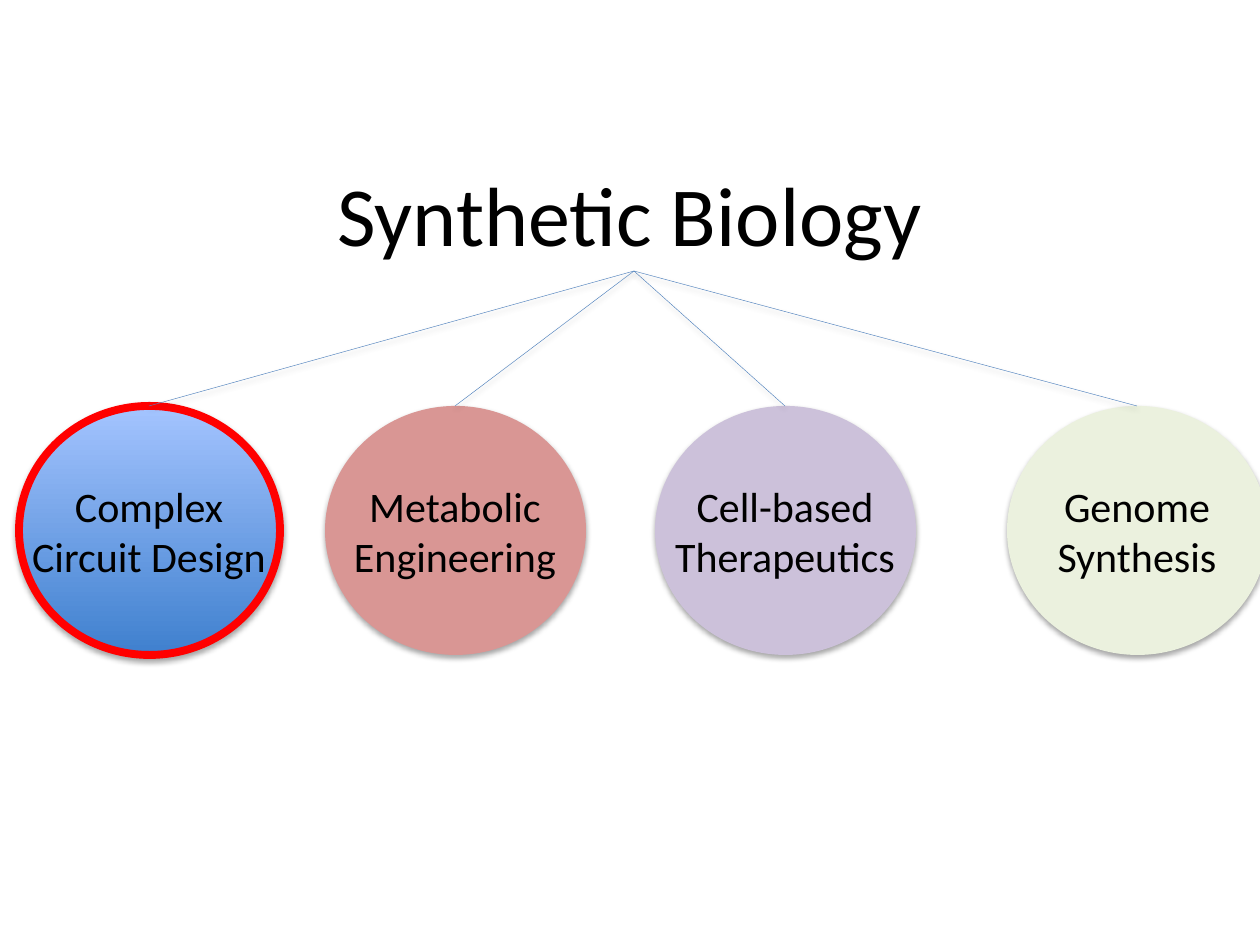
from lxml import etree
from pptx import Presentation
from pptx import util as u
from pptx.dml.color import RGBColor
from pptx.enum import shapes, text
from pptx.oxml import ns

PX = u.Inches(1) / 126
INK = {
    "text": "000000", "wire": "4F81BD", "ring": "FF0000",
    "low": "3F80CE", "high": "A4C4FF",
    "rose": "D99694", "lilac": "CCC1DA", "lime": "EBF1DE",
}


def px(*sizes):
    return [round(n * PX) for n in sizes]


def rgb(name):
    return RGBColor.from_string(INK[name])


def shade(item, dist, alpha):
    props = item._element.spPr
    effects = etree.SubElement(props, ns.qn("a:effectLst"))
    outer = etree.SubElement(effects, ns.qn("a:outerShdw"), blurRad="40000",
                             dist=str(dist), dir="5400000", rotWithShape="0")
    ink = etree.SubElement(outer, ns.qn("a:srgbClr"), val=INK["text"])
    etree.SubElement(ink, ns.qn("a:alpha"), val=str(alpha * 1000))


def write(slide, words, box, size=24, wrap=True, align=text.PP_ALIGN.CENTER):
    frame = slide.shapes.add_textbox(*px(*box)).text_frame
    frame.word_wrap = wrap
    frame.auto_size = text.MSO_AUTO_SIZE.SHAPE_TO_FIT_TEXT
    para = frame.paragraphs[0]
    para.alignment = align
    run = para.add_run()
    run.text = words
    run.font.name = "Calibri"
    run.font.size = u.Pt(size)
    run.font.color.rgb = rgb("text")


def topic(slide, box, words, fill, span):
    left, top, wide, high = box
    disc = slide.shapes.add_shape(shapes.MSO_SHAPE.OVAL, *px(*box))
    if fill:
        disc.fill.solid()
        disc.fill.fore_color.rgb = rgb(fill)
        disc.line.fill.background()
    else:
        disc.fill.gradient()
        disc.fill.gradient_angle = 90
        for stop, name, place in zip(disc.fill.gradient_stops, ("low", "high"), (0, 1)):
            stop.color.rgb = rgb(name)
            stop.position = place
        disc.line.color.rgb = rgb("ring")
        disc.line.width = u.Pt(4.5)
    shade(disc, 23000, 35)
    write(slide, words, (left + (wide - span) // 2, top + 68, span, 115))


def branch(slide, start, end):
    wire = slide.shapes.add_connector(shapes.MSO_CONNECTOR.STRAIGHT, *px(*start, *end))
    wire.line.color.rgb = rgb("wire")
    wire.line.width = u.Pt(0.25)
    shade(wire, 20000, 38)


def tree(slide, box):
    left, top, wide, high = box
    disc_w, disc_h, disc_y = 261, 249, top + 250
    root = (left + 615, top + 115)
    topics = [
        (0, "Complex Circuit Design", None, 266),
        (306, "Metabolic Engineering", "rose", 266),
        (636, "Cell-based Therapeutics", "lilac", 310),
        (wide - disc_w, "Genome Synthesis", "lime", 310),
    ]
    write(slide, "Synthetic Biology", (left + 306, top, 617, 115),
          size=48, wrap=False, align=text.PP_ALIGN.LEFT)
    for shift, words, fill, span in topics:
        topic(slide, (left + shift, disc_y, disc_w, disc_h), words, fill, span)
    for shift, *_ in topics:
        branch(slide, root, (left + shift + disc_w // 2, disc_y))


def main():
    deck = Presentation()
    deck.slide_width, deck.slide_height = px(1260, 945)
    slide = deck.slides.add_slide(deck.slide_layouts[6])
    tree(slide, (19, 156, 1249, 499))
    deck.save("out.pptx")


if __name__ == "__main__":
    main()
